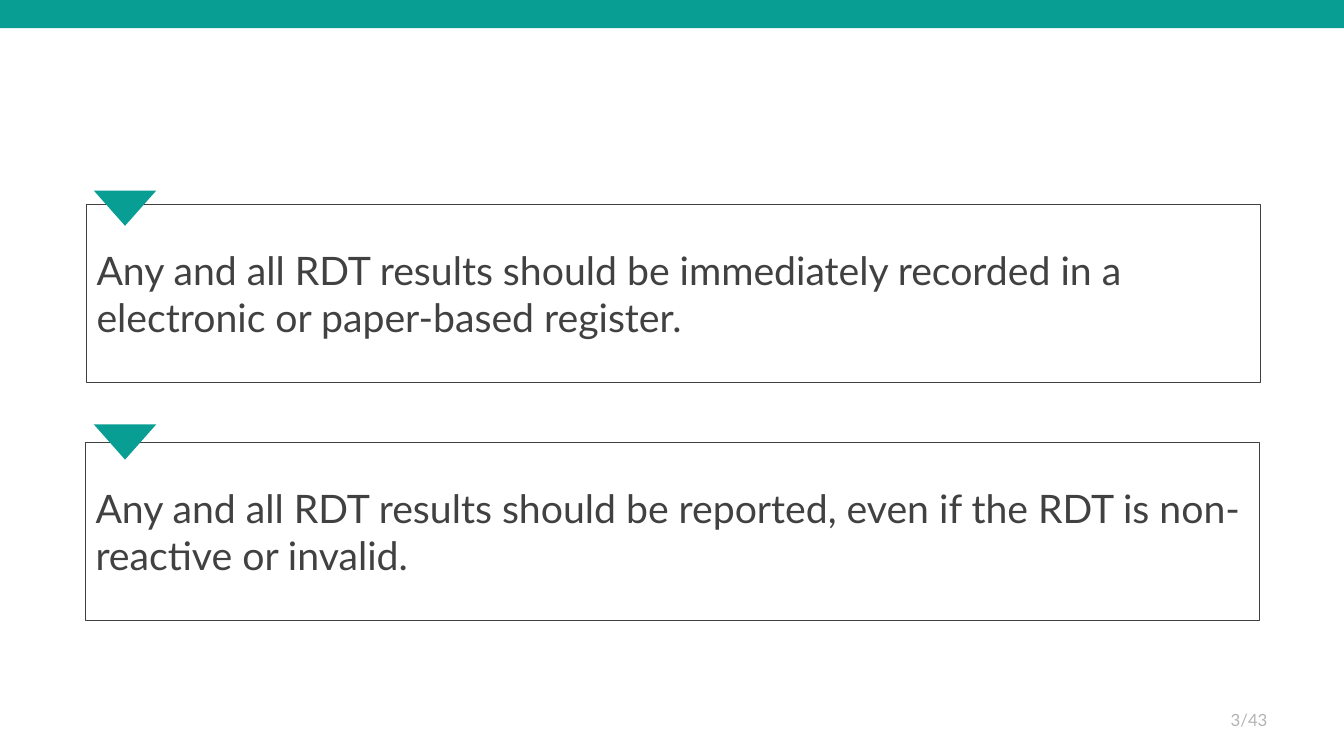
from pptx import Presentation
from pptx.dml.color import RGBColor
from pptx.enum import shapes, text
from pptx.util import Inches, Pt

TEAL, DARK, GREY = "099E93", "414141", "B3B3B3"


def paint(shape, fill=None, line=None):
    shape.shadow.inherit = False
    for part, color in ((shape.fill, fill), (shape.line.fill, line)):
        if color:
            part.solid()
            part.fore_color.rgb = RGBColor.from_string(color)
        else:
            part.background()


def write(shape, words, size, color, align=text.PP_ALIGN.LEFT, after=0, spacing=1.0):
    frame = shape.text_frame
    frame.word_wrap = True
    frame.vertical_anchor = text.MSO_ANCHOR.MIDDLE
    paragraph = frame.paragraphs[0]
    paragraph.alignment = align
    paragraph.space_after = Pt(after)
    paragraph.line_spacing = spacing
    run = paragraph.add_run()
    run.text = words
    run.font.name = "Lato"
    run.font.size = Pt(size)
    run.font.color.rgb = RGBColor.from_string(color)


prs = Presentation()
prs.slide_width, prs.slide_height = Inches(13.33), Inches(7.5)
slide = prs.slides.add_slide(prs.slide_layouts[6])
add_shape = slide.shapes.add_shape

# Top band
band = add_shape(shapes.MSO_SHAPE.RECTANGLE,
                 Inches(-0.08), Inches(-0.09), Inches(13.5), Inches(0.37))
paint(band, fill=TEAL)

# Framed statements, each with a marker pointing down into it
statements = [
    (0.86, 2.03, 1.89, "Any and all RDT results should be immediately recorded "
                       "in a electronic or paper-based register."),
    (0.85, 4.39, 4.21, "Any and all RDT results should be reported, "
                       "even if the RDT is non-reactive or invalid."),
]
for left, top, marker_top, words in statements:
    statement = add_shape(shapes.MSO_SHAPE.RECTANGLE,
                          Inches(left), Inches(top), Inches(11.64), Inches(1.77))
    paint(statement, line=DARK)
    statement.line.width = Pt(0.75)
    write(statement, words, 28, DARK, after=6)

    marker = add_shape(shapes.MSO_SHAPE.ISOSCELES_TRIANGLE,
                       Inches(0.93), Inches(marker_top), Inches(0.62), Inches(0.35))
    marker.rotation = 180
    paint(marker, fill=TEAL)

# Page number
page_number = slide.shapes.add_textbox(Inches(9.67), Inches(6.95), Inches(3), Inches(0.4))
write(page_number, "3/43", 12, GREY, align=text.PP_ALIGN.RIGHT, spacing=0.9)

prs.save("out.pptx")
